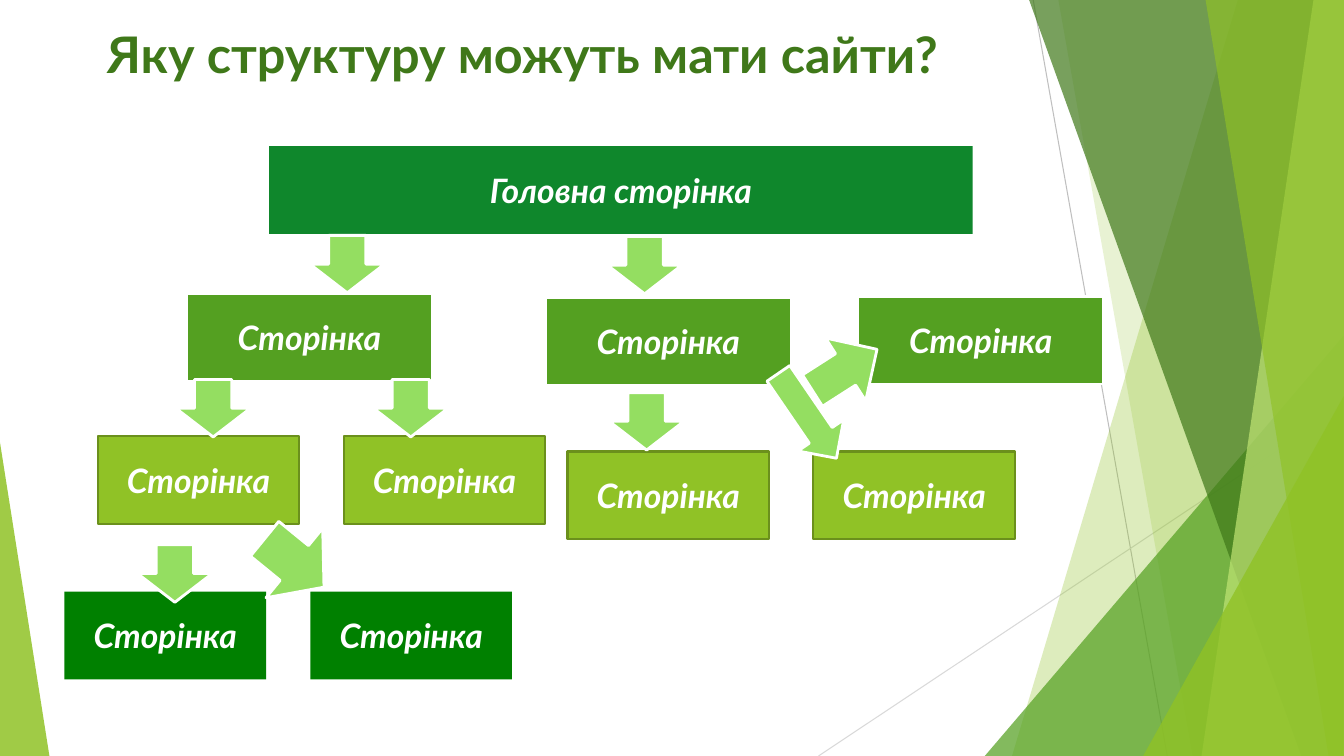
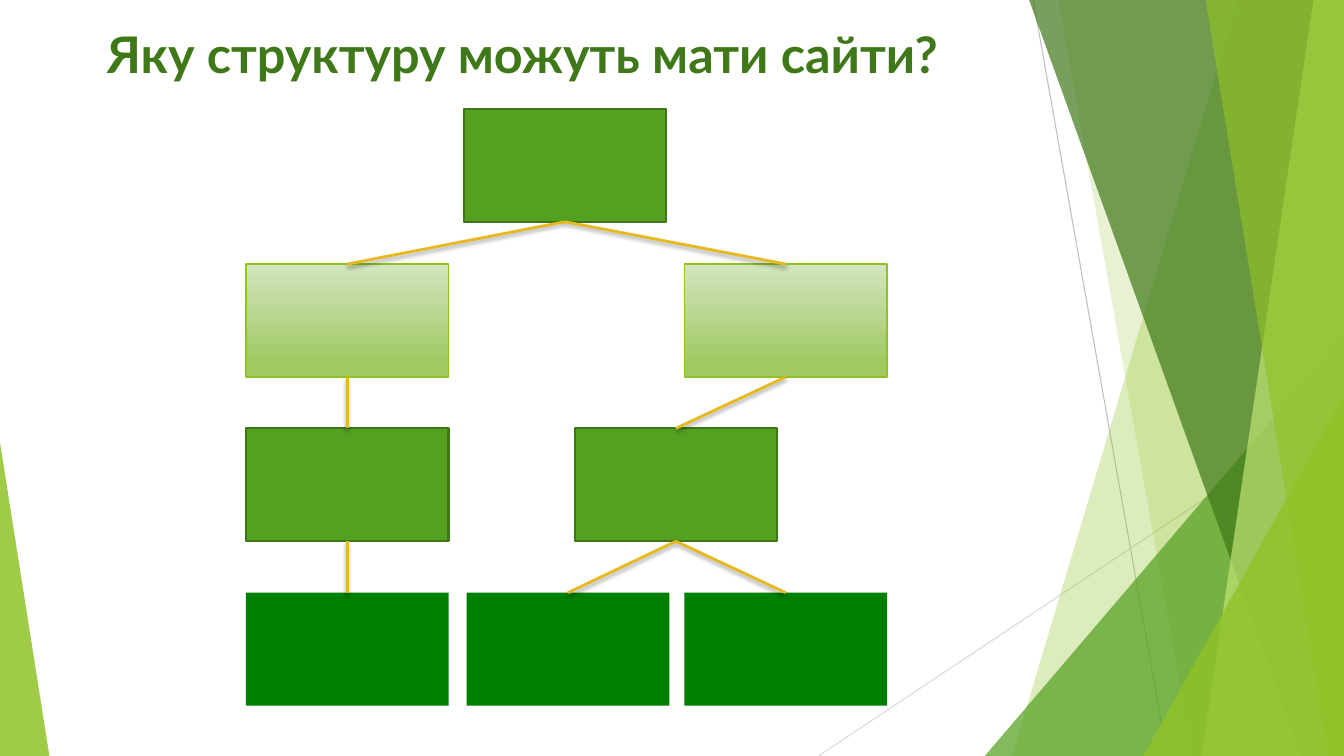
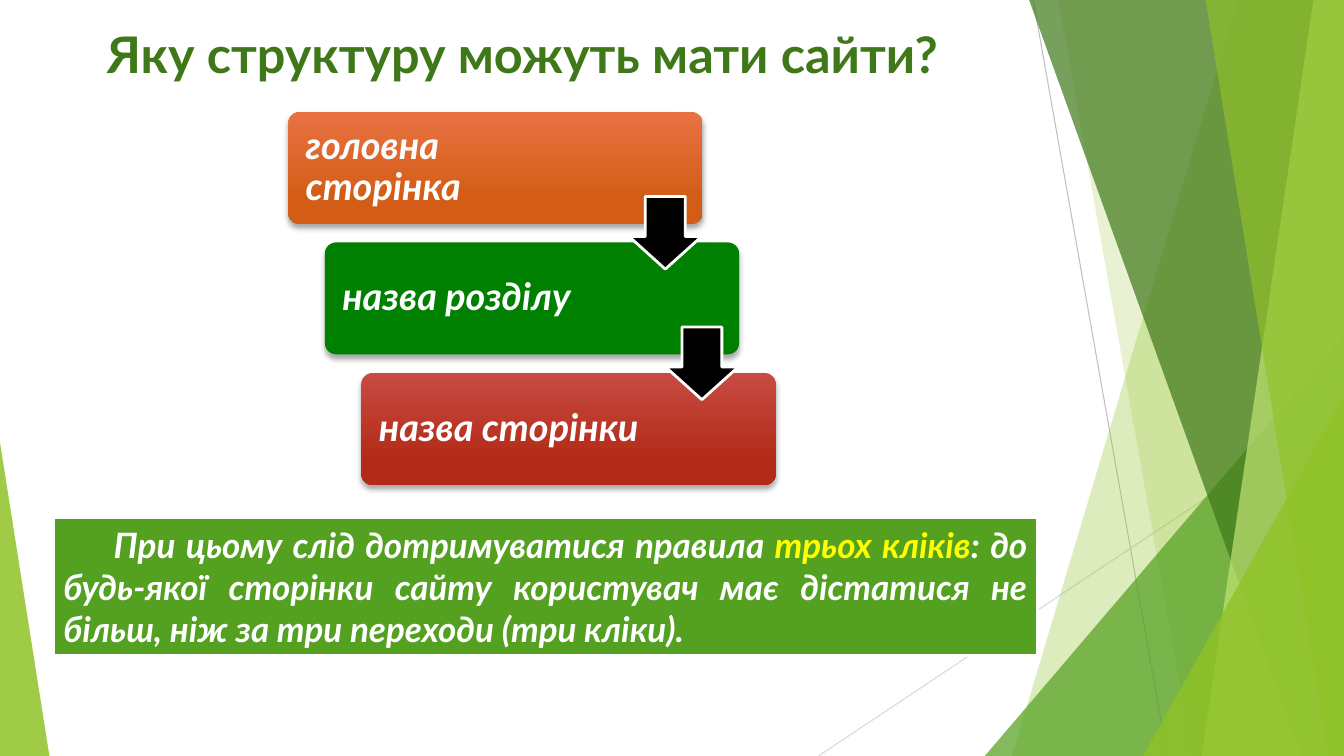
"""Three slides on the structure of web sites, on a green faceted layout."""
from lxml.etree import SubElement
from pptx import Presentation
from pptx.dml.color import RGBColor as Rgb
from pptx.enum.shapes import MSO_CONNECTOR as Wire, MSO_SHAPE as Form
from pptx.enum.text import MSO_ANCHOR as Anchor, PP_ALIGN as Align
from pptx.oxml.ns import qn
from pptx.util import Inches, Pt

WHITE = Rgb(0xFF, 0xFF, 0xFF)
BLACK = Rgb(0, 0, 0)
YELLOW = Rgb(0xFF, 0xFF, 0)
GOLD = Rgb(0xE6, 0xB9, 0x1E)
GREY = Rgb(0xBF, 0xBF, 0xBF)
SILVER = Rgb(0xD9, 0xD9, 0xD9)
LIME = Rgb(0x90, 0xC2, 0x26)
OLIVE = Rgb(0x6B, 0x90, 0x1C)
LEAF = Rgb(0x54, 0xA0, 0x21)
MOSS = Rgb(0x3F, 0x78, 0x19)
FERN = Rgb(0x3E, 0x76, 0x18)
PALE = Rgb(0xC0, 0xE4, 0x74)
MINT = Rgb(0x94, 0xDE, 0x61)
EMERALD = Rgb(0x0F, 0x87, 0x2C)
GREEN = Rgb(0, 0x80, 0)
FADE = [Rgb(0xD3, 0xE5, 0xBE), Rgb(0xA0, 0xC9, 0x62), 0.88]
ORANGE = [Rgb(0xE8, 0x72, 0x42), Rgb(0xD3, 0x5D, 0x16), 0.78]
RED = [Rgb(0xC7, 0x4B, 0x42), Rgb(0xB3, 0x2B, 0x18), 0.78]

FONT = "Lato"
CELL = 0.1
COLS, ROWS = 133.33, 75


def draw(page, kind, place, fill=None, edge=None, wide=2, alpha=None, shade=None, turn=0, adj=None):
    """Put a line, a band or a preset shape on the grid and paint it."""
    spots = [Inches(n * CELL) for n in place]
    if kind == "line":
        shape = page.shapes.add_connector(Wire.STRAIGHT, *spots)
    elif kind == "band":
        top, foot = spots
        right, floor = Inches(COLS * CELL), Inches(ROWS * CELL)
        band = page.shapes.build_freeform(top, 0)
        band.add_line_segments([(right, 0), (right, floor), (foot, floor)])
        shape = band.convert_to_shape()
    else:
        shape = page.shapes.add_shape(kind, *spots)
        shape.rotation = turn
        for i, part in enumerate(adj or []):
            shape.adjustments[i] = part
    if isinstance(fill, list):
        shape.fill.gradient()
        shape.fill.gradient_angle = 270
        for stop, tone, spot in zip(shape.fill.gradient_stops, fill, (0, fill[2])):
            stop.color.rgb, stop.position = tone, spot
    elif fill is not None:
        shape.fill.solid()
        shape.fill.fore_color.rgb = fill
    props = shape.element.spPr
    if alpha:
        SubElement(props.find(".//" + qn("a:srgbClr")), qn("a:alpha"), val=str(alpha * 1000))
    if edge is None:
        shape.line.fill.background()
    else:
        shape.line.color.rgb, shape.line.width = edge, Pt(wide)
    glow = SubElement(props, qn("a:effectLst"))
    if shade:
        blur, dist = (str(Pt(n)) for n in shade)
        cast = SubElement(glow, qn("a:outerShdw"), blurRad=blur, dist=dist, dir="5400000", rotWithShape="0")
        tone = SubElement(cast, qn("a:srgbClr"), val="000000")
        SubElement(tone, qn("a:alpha"), val="35000")
    return shape


def write(shape, *runs, size=24, tone=WHITE, slant=True, align=Align.CENTER, anchor=Anchor.MIDDLE,
          space=None, indent=0, rim=None, pad=None):
    """Fill a shape with runs, each a text or a (text, colour) pair."""
    frame = shape.text_frame
    frame.word_wrap, frame.vertical_anchor = True, anchor
    if pad:
        frame.margin_left, frame.margin_right = (Inches(n * CELL) for n in pad)
    para = frame.paragraphs[0]
    para.alignment, para.line_spacing = align, space
    if indent:
        para._p.get_or_add_pPr().set("indent", str(Inches(indent * CELL)))
    for item in runs:
        text, ink = item if isinstance(item, tuple) else (item, tone)
        run = para.add_run()
        run.text = text
        font = run.font
        font.name, font.size, font.bold, font.italic = FONT, Pt(size), True, slant
        font.color.rgb = ink
        if rim is not None:
            props = run._r.get_or_add_rPr()
            line = SubElement(props, qn("a:ln"), w=str(Pt(1.75)))
            SubElement(SubElement(line, qn("a:solidFill")), qn("a:srgbClr"), val=str(rim))
            props.insert(0, line)


deck = Presentation()
deck.slide_width, deck.slide_height = Inches(COLS * CELL), Inches(ROWS * CELL)
base = deck.slide_layouts[5]
for hold in list(base.placeholders):
    if hold.placeholder_format.idx:
        hold.element.getparent().remove(hold.element)
head = base.placeholders[0]
head.left, head.top, head.width, head.height = (Inches(n * CELL) for n in (9.6, 1.8, 97.7, 9))

pages = [deck.slides.add_slide(base) for _ in range(3)]
for page in pages:
    write(page.shapes.title, "Яку структуру можуть мати сайти?", size=36, tone=MOSS, slant=False,
          align=Align.LEFT, anchor=Anchor.TOP, rim=LEAF)
tree, chart, steps = pages

decor = [draw(tree, "line", ends, edge=tone, wide=0.75) for ends, tone in (
    ((102.5, 0, 115.8, ROWS), GREY), ((COLS, 40.3, 81.2, ROWS), SILVER))]
for kind, place, tone, alpha, adj in (
    ("band", (122.8, 100.4), LIME, 30, None),
    ("band", (105, 118.3), LIME, 20, None),
    (Form.ISOSCELES_TRIANGLE, (97.7, 33.3, 35.6, 41.7), LEAF, 72, [1]),
    ("band", (102.1, 129.1), MOSS, 70, None),
    ("band", (130.3, 119.2), PALE, 70, None),
    ("band", (119.6, 131.8), LIME, 65, None),
    (Form.ISOSCELES_TRIANGLE, (113.4, 39.3, 19.9, 35.7), LIME, 80, [1]),
    (Form.ISOSCELES_TRIANGLE, (0, 43.9, 4.9, 31.1), LIME, 85, [0]),
):
    decor.append(draw(tree, kind, place, tone, alpha=alpha, adj=adj))
for i, shape in enumerate(decor):
    base.shapes.element.insert(2 + i, shape.element)

TALL = 8.7
for text, wide, fill, edge, rim, spots in (
    ("Головна сторінка", 69.8, EMERALD, None, 0, [(26.7, 14.5)]),
    ("Сторінка", 24.4, LEAF, WHITE, 2, [(18.5, 29.1), (54.1, 29.5), (85.1, 29.4)]),
    ("Сторінка", 20, LIME, OLIVE, 1.5, [(9.7, 43.3), (34.1, 43.3), (56.3, 44.8), (80.7, 44.8)]),
    ("Сторінка", 20, GREEN, None, 0, [(6.4, 58.7), (30.8, 58.7)]),
):
    for x, y in spots:
        write(draw(tree, Form.RECTANGLE, (x, y, wide, TALL), fill, edge, rim), text)

down = [((x, y, 5.7, 7.4), 270) for x, y in (
    (31.6, 22.5), (61.1, 22.6), (18.3, 36.8), (37.9, 36.8), (14.5, 53.2), (61.3, 38.1))]
slant = [((25.4, 51.4, 7.6, 8.9), 219.2), ((75, 38.5, 10.2, 5.5), 235.6), ((80, 33, 7.6, 7.4), 147.4)]
for place, turn in down + slant:
    draw(tree, Form.LEFT_ARROW, place, MINT, WHITE, turn=turn)

WIDE, TALL = 20.1, 11.2
nodes = []
for y, fill, edge, rim, lefts in (
    (10.8, LEAF, FERN, 1.5, [46]),
    (26.2, FADE, LIME, 1, [24.4, 67.9]),
    (42.5, LEAF, FERN, 1.5, [24.4, 57]),
    (58.8, GREEN, None, 0, [24.4, 46.3, 67.9]),
):
    for x in lefts:
        draw(chart, Form.RECTANGLE, (x, y, WIDE, TALL), fill, edge, rim)
        nodes.append((x + WIDE / 2, y))
for up, low in ((0, 1), (0, 2), (1, 3), (2, 4), (3, 5), (4, 6), (4, 7)):
    x, y = nodes[up]
    draw(chart, "line", (x, y + TALL, *nodes[low]), edge=GOLD, shade=(3, 2))

STEP, DROP = 3.63, 12.95
for i, (text, fill) in enumerate((
    ("головна сторінка", ORANGE), ("назва розділу", GREEN), ("назва сторінки", RED))):
    card = draw(steps, Form.ROUNDED_RECTANGLE, (28.6 + STEP * i, 11.1 + DROP * i, 41.1, 11.1),
                fill, shade=(4, 3), adj=[0.1])
    write(card, text, size=27, align=Align.LEFT, space=0.9, pad=(1.4, 12.8))
for i in range(2):
    draw(steps, Form.DOWN_ARROW, (62.4 + STEP * i, 19.5 + DROP * i, 7.2, 7.2), BLACK, WHITE, adj=[0.55, 0.45])

rule = draw(steps, Form.RECTANGLE, (5.3, 51.4, 97.6, 13.6), LEAF, WHITE)
write(rule, "При цьому слід дотримуватися правила ", ("трьох кліків", YELLOW),
      ": до будь-якої сторінки сайту користувач має дістатися не більш, ніж за три переходи (три кліки).",
      size=25, align=Align.JUSTIFY, indent=5)

deck.save("out.pptx")
